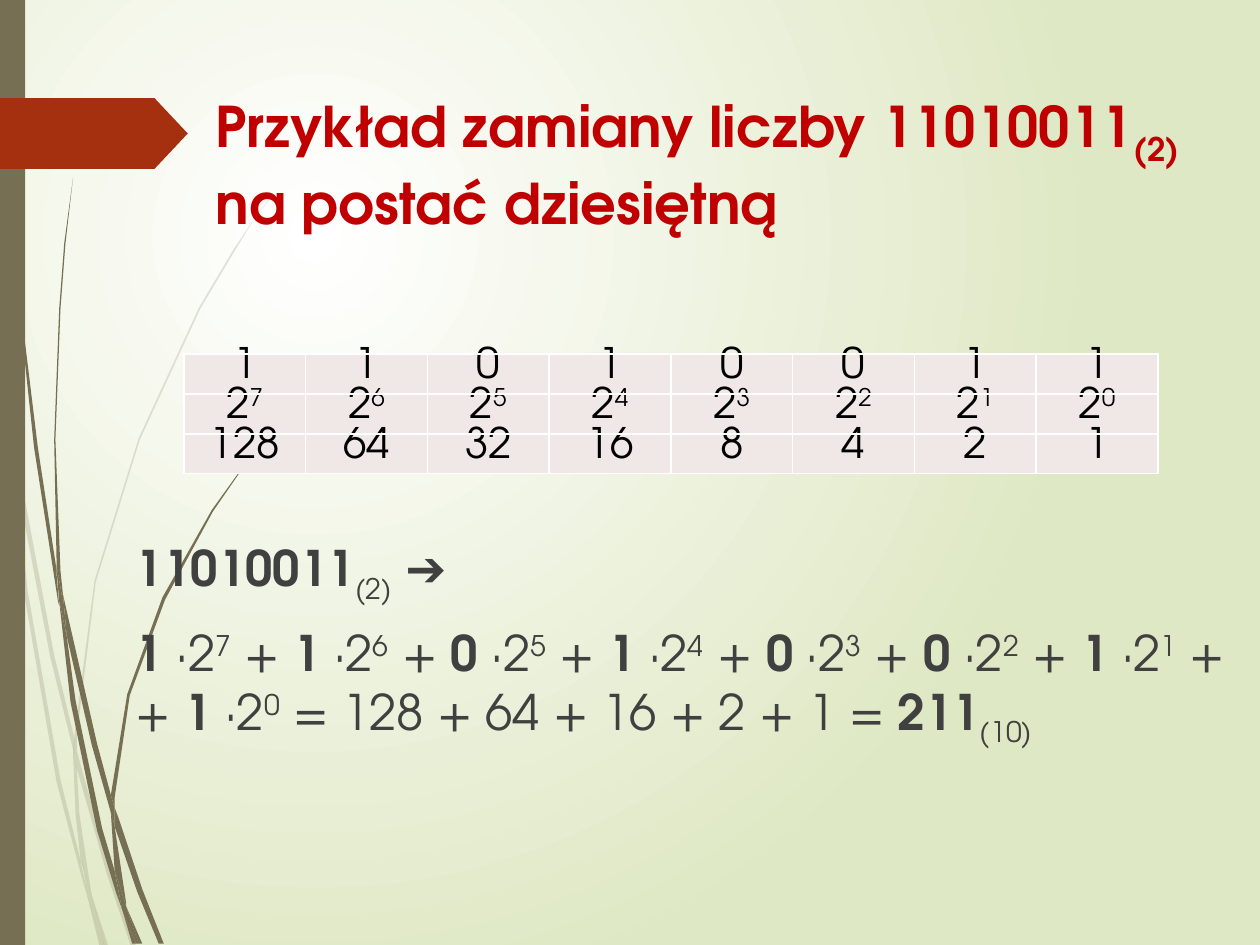
from typing import NamedTuple

from pptx import Presentation
from pptx.dml.color import RGBColor
from pptx.enum.shapes import MSO_SHAPE
from pptx.enum.text import MSO_ANCHOR, PP_ALIGN
from pptx.oxml.ns import qn
from pptx.oxml.xmlchemy import OxmlElement
from pptx.util import Pt

PX = 9144  # 100 px to the inch
PAGE_WIDTH, PAGE_HEIGHT = 1000, 750
FONT = "TeX Gyre Adventor"
OLIVE, RUST, RED = "766F54", "A53010", "C00000"
GREY, BLACK, WHITE = "404040", "000000", "FFFFFF"
PALE_GREEN, PALE_PINK = "DFE8C4", "F0E8E7"
SUPER, SUB = 30, -25
BITS = "11010011"


class Box(NamedTuple):
    left: int
    top: int
    width: int
    height: int

    def emu(self) -> list[int]:
        return [length * PX for length in self]


class Span(NamedTuple):
    text: str
    bold: bool = False
    baseline: int = 0


class TextStyle(NamedTuple):
    size: int
    color: str


FAINT_WISPS = [
    [(8, 350), (6, 322), (0, 282), (0, 299), (7, 344)],
    [(40, 522), (59, 599), (59, 586), (43, 520), (10, 345), (12, 376)],
    [(64, 607), (61, 596), (61, 610), (85, 694), (104, 751), (108, 751), (88, 692)],
    [(83, 751), (86, 751), (73, 711)],
    [(64, 683), (48, 619), (22, 469), (12, 376), (8, 350), (19, 470), (45, 621),
     (64, 693), (70, 714), (69, 707)],
    [(58, 599), (60, 646), (64, 683), (67, 692), (73, 711), (72, 706), (63, 646),
     (61, 610), (61, 608)],
    [(61, 584), (76, 462), (111, 349), (159, 245), (187, 198), (201, 175), (217, 154),
     (217, 153), (201, 175), (186, 197), (158, 244), (110, 348), (75, 461), (59, 584),
     (59, 586), (61, 596)],
    [(70, 714), (79, 751), (82, 751)],
    [(61, 608), (61, 610), (61, 596), (59, 586), (58, 599)],
    [(67, 692), (65, 683), (69, 707), (70, 714), (82, 751), (83, 751), (73, 711)],
]
SOLID_WISPS = [
    [(5, 110), (14, 233), (27, 355), (46, 477), (47, 481), (45, 457), (45, 453),
     (30, 355), (15, 232), (6, 109), (4, 48), (3, 0), (2, 0), (3, 48)],
    [(73, 592), (88, 645), (88, 633), (88, 631), (77, 590), (50, 472), (53, 505)],
    [(94, 649), (91, 641), (91, 656), (109, 708), (126, 749), (130, 749), (113, 706)],
    [(91, 691), (81, 657), (60, 556), (53, 505), (47, 477), (56, 557), (77, 659),
     (92, 708), (97, 722), (96, 717)],
    [(50, 472), (48, 453), (44, 349), (48, 245), (52, 193), (58, 141), (51, 193),
     (47, 245), (43, 349), (45, 449), (49, 472)],
    [(110, 749), (113, 749), (100, 719)],
    [(47, 477), (53, 505), (50, 472), (49, 472), (45, 449), (45, 453)],
    [(91, 633), (103, 552), (131, 476), (169, 406), (191, 374), (203, 359), (216, 344),
     (215, 344), (203, 358), (191, 373), (168, 405), (129, 474), (101, 551), (88, 631),
     (91, 641)],
    [(97, 722), (105, 749), (108, 749)],
    [(88, 645), (91, 691), (96, 706), (100, 719), (100, 716), (91, 656), (90, 651)],
    [(88, 645), (90, 651), (91, 656), (91, 641), (88, 631), (88, 633)],
    [(96, 706), (91, 691), (96, 717), (97, 722), (108, 749), (110, 749), (100, 719)],
]


def rgb(color: str) -> RGBColor:
    return RGBColor.from_string(color)


def append_xml(parent, tag: str, **attributes: str):
    child = OxmlElement(tag)
    for name, value in attributes.items():
        child.set(name, value)
    parent.append(child)
    return child


def paint(shape, color: str, opacity: int = 100) -> None:
    shape.shadow.inherit = False
    shape.fill.solid()
    shape.fill.fore_color.rgb = rgb(color)
    shape.line.fill.background()
    if opacity < 100:
        swatch = shape._element.spPr.find(qn("a:solidFill"))[0]
        append_xml(swatch, "a:alpha", val=str(opacity * 1000))


def add_background(page) -> None:
    """Radial gradient, brightest in the upper left."""
    fill = page.background.fill
    fill.gradient()
    for stop, color in zip(fill.gradient_stops, (WHITE, PALE_GREEN)):
        stop.color.rgb = rgb(color)
    gradient = next(page._element.iter(qn("a:gradFill")))
    gradient.remove(gradient.find(qn("a:lin")))
    circle = append_xml(gradient, "a:path", path="circle")
    append_xml(circle, "a:fillToRect", l="50000", t="50000", r="100000", b="100000")


def add_wisps(page, outlines: list, opacity: int) -> None:
    for start, *rest in outlines:
        builder = page.shapes.build_freeform(*start, scale=PX)
        builder.add_line_segments(rest, close=True)
        paint(builder.convert_to_shape(), OLIVE, opacity)


def write(para, spans: list[Span], style: TextStyle) -> None:
    for span in spans:
        run = para.add_run()
        run.text = span.text
        run.font.name = FONT
        run.font.size = Pt(style.size)
        run.font.bold = span.bold
        run.font.color.rgb = rgb(style.color)
        if span.baseline:
            run._r.get_or_add_rPr().set("baseline", str(span.baseline * 1000))


def add_title(page) -> None:
    title = page.shapes.title
    title.left, title.top, title.width, title.height = Box(161, 68, 795, 140).emu()
    title.text_frame.word_wrap = True
    title.text_frame.vertical_anchor = MSO_ANCHOR.TOP
    para = title.text_frame.paragraphs[0]
    para.alignment = PP_ALIGN.LEFT
    spans = [Span(f"Przykład zamiany liczby {BITS}", True), Span("(2) ", True, SUB),
             Span("na postać dziesiętną", True)]
    write(para, spans, TextStyle(32, RED))


def format_cell(cell, spans: list[Span]) -> None:
    cell.margin_left = cell.margin_right = 5 * PX
    cell.margin_top = cell.margin_bottom = 0
    cell.fill.solid()
    cell.fill.fore_color.rgb = rgb(PALE_PINK)
    properties = cell._tc.get_or_add_tcPr()
    for index, side in enumerate(("a:lnL", "a:lnR", "a:lnT", "a:lnB")):
        border = append_xml(properties, side, w=str(Pt(1)))
        append_xml(append_xml(border, "a:solidFill"), "a:srgbClr", val=WHITE)
        properties.insert(index, border)
    para = cell.text_frame.paragraphs[0]
    para.alignment = PP_ALIGN.CENTER
    para.line_spacing = 0.79
    write(para, spans, TextStyle(24, BLACK))


def add_bit_table(page) -> None:
    """Each column holds a bit, its power of two and that power's value."""
    box = Box(146, 281, 773, 93)
    table = page.shapes.add_table(3, len(BITS), *box.emu()).table
    table.first_row = table.horz_banding = False
    for row in table.rows:
        row.height = box.height * PX // 3
    for column, bit in enumerate(BITS):
        table.columns[column].width = box.width * PX // len(BITS)
        power = len(BITS) - 1 - column
        entries = [[Span(bit)], [Span("2"), Span(str(power), baseline=SUPER)],
                   [Span(str(2 ** power))]]
        for row, spans in enumerate(entries):
            format_cell(table.cell(row, column), spans)


def expansion() -> list[Span]:
    """The sum of bits times powers, with the plus repeated after the line break."""
    spans = []
    for power, bit in zip(reversed(range(len(BITS))), BITS):
        joint = {1: " + + ", 0: " = 128 + 64 + 16 + 2 + 1 = "}.get(power, " + ")
        spans += [Span(bit, True), Span(" ·2"), Span(str(power), baseline=SUPER),
                  Span(joint)]
    return spans + [Span("211", True), Span("(10)", baseline=SUB)]


def add_calculation(page) -> None:
    frame = page.shapes.add_textbox(*Box(98, 422, 913, 180).emu()).text_frame
    frame.word_wrap = True
    style = TextStyle(28, GREY)
    number = frame.paragraphs[0]
    number.space_after = Pt(10)
    write(number, [Span(BITS, True), Span("(2)", baseline=SUB), Span(" ➔", True)], style)
    write(frame.add_paragraph(), expansion(), style)


def main() -> None:
    deck = Presentation()
    deck.slide_width, deck.slide_height = PAGE_WIDTH * PX, PAGE_HEIGHT * PX
    page = deck.slides.add_slide(deck.slide_layouts[5])
    add_background(page)
    add_wisps(page, FAINT_WISPS, 20)
    add_wisps(page, SOLID_WISPS, 100)
    side_bar = page.shapes.add_shape(MSO_SHAPE.RECTANGLE, *Box(0, 0, 20, 750).emu())
    paint(side_bar, OLIVE)
    marker = page.shapes.add_shape(MSO_SHAPE.PENTAGON, *Box(0, 78, 149, 56).emu())
    marker.adjustments[0] = 0.47
    paint(marker, RUST)
    add_title(page)
    add_calculation(page)
    add_bit_table(page)
    deck.save("out.pptx")


if __name__ == "__main__":
    main()
